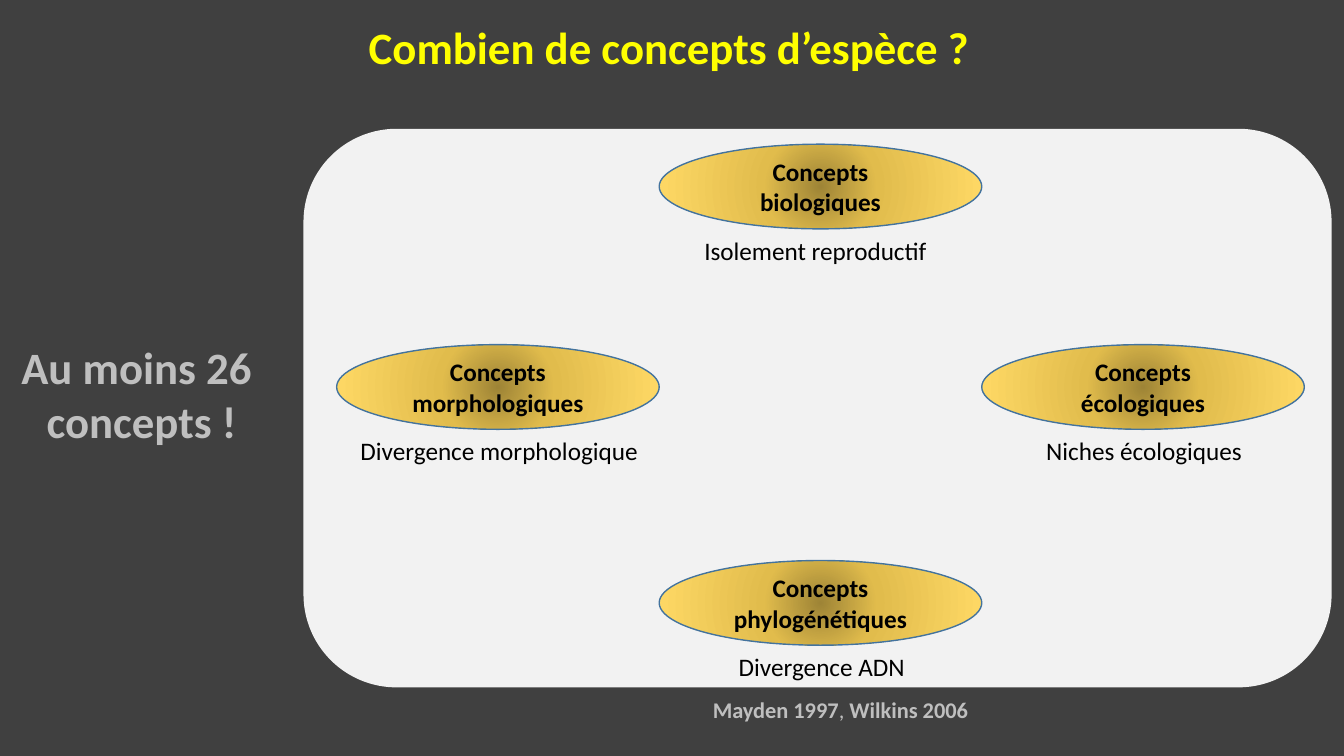
"""Builds the slide on how many species concepts exist."""
from pptx import Presentation
from pptx.dml.color import RGBColor
from pptx.enum import shapes, text
from pptx.oxml import parse_xml, ns
from pptx.util import Pt

DARK = RGBColor(0x40, 0x40, 0x40)
PANEL = RGBColor(0xF2, 0xF2, 0xF2)
GREY = RGBColor(0xBF, 0xBF, 0xBF)
YELLOW = RGBColor(0xFF, 0xFF, 0x00)
BLACK = RGBColor(0, 0, 0)
OUTLINE = RGBColor(0x43, 0x73, 0x9E)
GOLD = ((0, RGBColor(0x9E, 0x84, 0x36)), (34, RGBColor(0xE1, 0xBC, 0x4C)),
        (100, RGBColor(0xFF, 0xD9, 0x66)))
CENTER = text.PP_ALIGN.CENTER
LEFT = text.PP_ALIGN.LEFT


class ConceptSlide:
    font_name = "Calibri"

    def __init__(self, deck):
        self.slide = deck.slides.add_slide(deck.slide_layouts[6])
        fill = self.slide.background.fill
        fill.solid()
        fill.fore_color.rgb = DARK

    def add_lines(self, frame, lines, size, color, align):
        for index, runs in enumerate(lines):
            paragraph = frame.add_paragraph() if index else frame.paragraphs[0]
            paragraph.alignment = align
            for wording, bold in runs:
                run = paragraph.add_run()
                run.text = wording
                run.font.name = self.font_name
                run.font.size = Pt(size)
                run.font.bold = bold
                run.font.color.rgb = color

    def label(self, box, lines, size, color, align=LEFT, wrap=False):
        frame = self.slide.shapes.add_textbox(*map(Pt, box)).text_frame
        frame.word_wrap = wrap
        frame.auto_size = text.MSO_AUTO_SIZE.SHAPE_TO_FIT_TEXT
        self.add_lines(frame, lines, size, color, align)
        return frame

    def shape(self, kind, box):
        shape = self.slide.shapes.add_shape(kind, *map(Pt, box))
        shape.shadow.inherit = False
        return shape

    def panel(self, box):
        panel = self.shape(shapes.MSO_SHAPE.ROUNDED_RECTANGLE, box)
        panel.fill.solid()
        panel.fill.fore_color.rgb = PANEL
        panel.line.fill.background()

    def concept(self, box, lines):
        oval = self.shape(shapes.MSO_SHAPE.OVAL, box)
        stops = "".join(
            f'<a:gs pos="{position * 1000}"><a:srgbClr val="{color}"/></a:gs>'
            for position, color in GOLD)
        oval.fill.background()
        properties = oval.element.spPr
        properties.replace(properties.find(ns.qn("a:noFill")), parse_xml(
            f'<a:gradFill {ns.nsdecls("a")} rotWithShape="1"><a:gsLst>{stops}</a:gsLst>'
            '<a:path path="circle"><a:fillToRect l="50000" t="50000" r="50000" b="50000"/>'
            '</a:path></a:gradFill>'))
        oval.line.color.rgb = OUTLINE
        oval.line.width = Pt(1)
        oval.text_frame.word_wrap = True
        oval.text_frame.vertical_anchor = text.MSO_ANCHOR.MIDDLE
        self.add_lines(oval.text_frame, [[(line, True)] for line in lines], 18, BLACK, CENTER)

    def citation(self, box, runs):
        frame = self.label(box, [runs], 16, GREY, CENTER, wrap=True)
        properties = frame.paragraphs[0]._p.get_or_add_pPr()
        properties.set("marL", str(Pt(36)))
        properties.set("indent", "0")


def main():
    deck = Presentation()
    deck.slide_width, deck.slide_height = Pt(960), Pt(540)
    page = ConceptSlide(deck)
    page.panel((216.8, 92, 734.4, 399))
    page.citation((465, 494, 238.3, 26.6),
                  [("Mayden 1997", True), (", ", False), ("Wilkins 2006 ", True)])
    page.label((256.3, 10.8, 447.1, 46), [[("Combien de concepts d’espèce ?", True)]], 32, YELLOW)

    width, height = 230.4, 60.5
    first_left = 240.5
    concepts = [
        (1, 103, ["Concepts biologiques"], "Isolement reproductif", 496, 180),
        (0, 246.2, ["Concepts morphologiques"], "Divergence morphologique", 250.4, 215.3),
        (2, 246.2, ["Concepts écologiques"], "Niches écologiques", 740.2, 155.5),
        (1, 400.4, ["Concepts", "phylogénétiques"], "Divergence ADN", 520.6, 134.6),
    ]
    for column, top, name, criterion, criterion_left, criterion_width in concepts:
        page.concept((first_left + column * width, top, width, height), name)
        page.label((criterion_left, top + height + 1, criterion_width, 29),
                   [[(criterion, False)]], 18, BLACK)

    page.label((7.2, 239, 187.9, 85), [[("Au moins 26 ", True)], [("concepts !", True)]],
               32, GREY, CENTER)
    deck.save("out.pptx")


if __name__ == "__main__":
    main()
